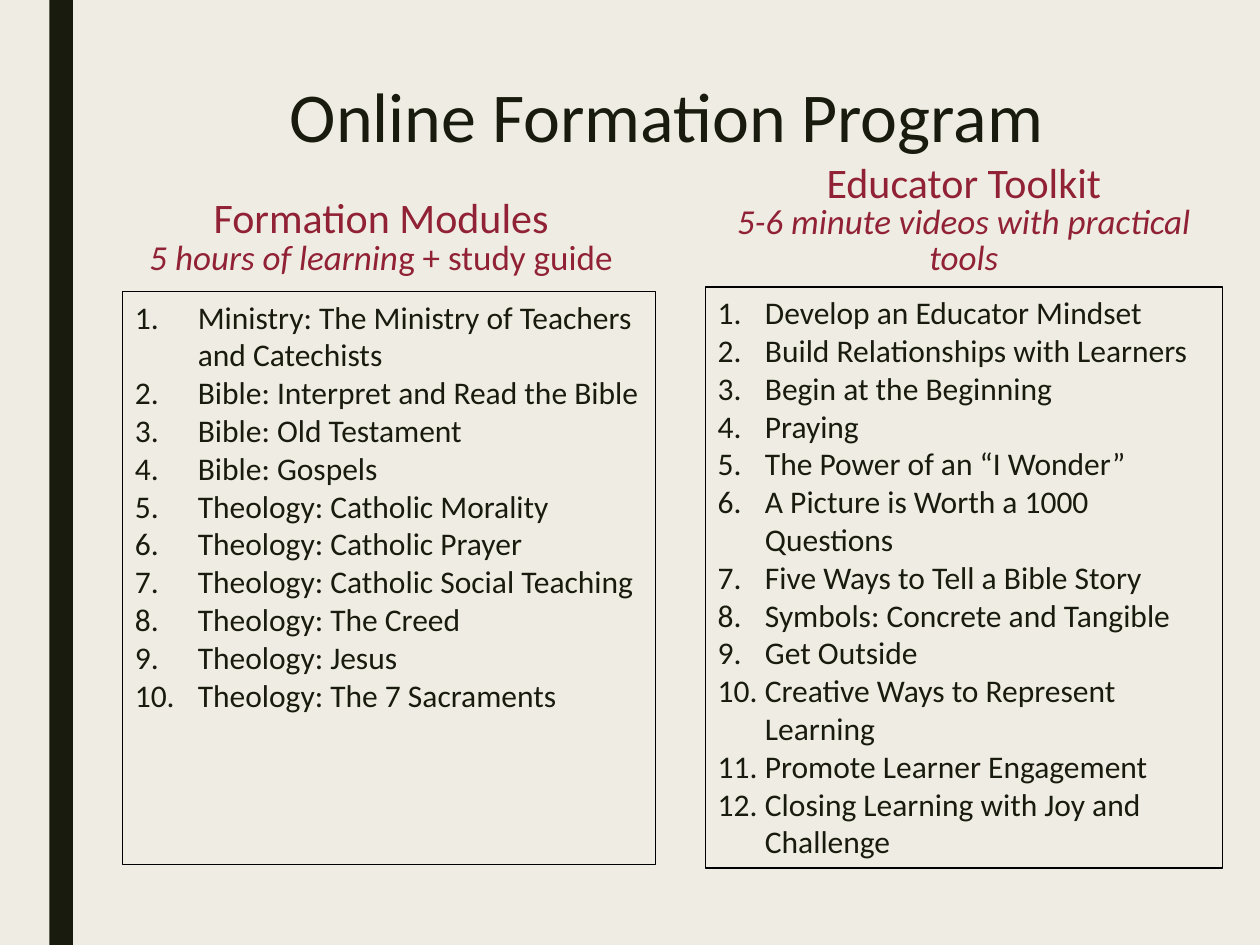
from lxml.etree import SubElement
from pptx import Presentation
from pptx.dml.color import RGBColor as RGB
from pptx.enum.shapes import MSO_SHAPE as Shape
from pptx.enum.text import MSO_ANCHOR as Anchor, PP_ALIGN as Align
from pptx.oxml.ns import qn
from pptx.util import Pt

COLORS = {"back": "EFEDE3", "dark": "191B0E", "red": "912236", "line": "000000"}
FONT = "Calibri"
TITLE = "Online Formation Program"

# Each note is a list of (text, italic) runs; each box is left, top, width, height.
COLUMNS = [
    {
        "head": "Formation Modules",
        "note": [("5 hours of learnin", True), ("g + study guide", False)],
        "box": (70, 166.5, 304.5, 327.5),
        "indent": 36,
        "items": [
            "Ministry: The Ministry of Teachers and Catechists",
            "Bible: Interpret and Read the Bible",
            "Bible: Old Testament",
            "Bible: Gospels",
            "Theology: Catholic Morality",
            "Theology: Catholic Prayer",
            "Theology: Catholic Social Teaching",
            "Theology: The Creed",
            "Theology: Jesus",
            "Theology: The 7 Sacraments",
        ],
    },
    {
        "head": "Educator Toolkit",
        "note": [("5-6 minute videos with practical tools", True)],
        "box": (403, 164, 295.5, 332),
        "indent": 27,
        "items": [
            "Develop an Educator Mindset",
            "Build Relationships with Learners",
            "Begin at the Beginning",
            "Praying",
            "The Power of an “I Wonder”",
            "A Picture is Worth a 1000 Questions",
            "Five Ways to Tell a Bible Story",
            "Symbols: Concrete and Tangible",
            "Get Outside",
            "Creative Ways to Represent Learning",
            "Promote Learner Engagement",
            "Closing Learning with Joy and Challenge",
        ],
    },
]
HEAD_TOP, HEAD_WIDTH, HEAD_HEIGHT = 104.5, 295.5, 57.5


def color(name):
    return RGB.from_string(COLORS[name])


def add_box(slide, box, anchor=Anchor.TOP):
    shape = slide.shapes.add_textbox(*map(Pt, box))
    shape.text_frame.word_wrap = True
    shape.text_frame.vertical_anchor = anchor
    return shape


def add_lines(frame, lines, size, tone, align=Align.LEFT, space=None):
    """Write each line, a list of (text, italic) runs, as a paragraph."""
    for i, runs in enumerate(lines):
        para = frame.add_paragraph() if i else frame.paragraphs[0]
        para.alignment = align
        para.line_spacing = space
        font = para.font
        font.name, font.size = FONT, Pt(size[i] if isinstance(size, list) else size)
        font.color.rgb = color(tone)
        for text, slant in runs:
            run = para.add_run()
            run.text = text
            run.font.italic = slant


def number(para, indent):
    props = para._p.get_or_add_pPr()
    props.set("marL", str(Pt(indent)))
    props.set("indent", str(-Pt(indent)))
    mark = SubElement(props, qn("a:buAutoNum"), type="arabicPeriod")
    props.find(qn("a:defRPr")).addprevious(mark)


def add_column(slide, col):
    head = add_box(slide, (col["box"][0], HEAD_TOP, HEAD_WIDTH, HEAD_HEIGHT),
                   Anchor.BOTTOM)
    add_lines(head.text_frame, [[(col["head"], False)], col["note"]],
              [24, 20], "red", Align.CENTER, 0.84)

    panel = add_box(slide, col["box"])
    panel.line.color.rgb = color("line")
    panel.line.width = Pt(0.75)
    add_lines(panel.text_frame, [[(item, False)] for item in col["items"]],
              18, "dark")
    for para in panel.text_frame.paragraphs:
        number(para, col["indent"])


def main():
    deck = Presentation()
    deck.slide_width, deck.slide_height = Pt(720), Pt(540)
    slide = deck.slides.add_slide(deck.slide_layouts[6])
    slide.background.fill.solid()
    slide.background.fill.fore_color.rgb = color("back")

    bar = slide.shapes.add_shape(Shape.RECTANGLE, Pt(28.25), 0, Pt(13.5), Pt(540))
    bar.shadow.inherit = False
    bar.fill.solid()
    bar.fill.fore_color.rgb = color("dark")
    bar.line.fill.background()

    title = add_box(slide, (41.75, 44, 678.25, 57.5))
    add_lines(title.text_frame, [[(TITLE, False)]], 40, "dark", Align.CENTER, 0.89)
    for col in COLUMNS:
        add_column(slide, col)
    deck.save("out.pptx")


if __name__ == "__main__":
    main()
